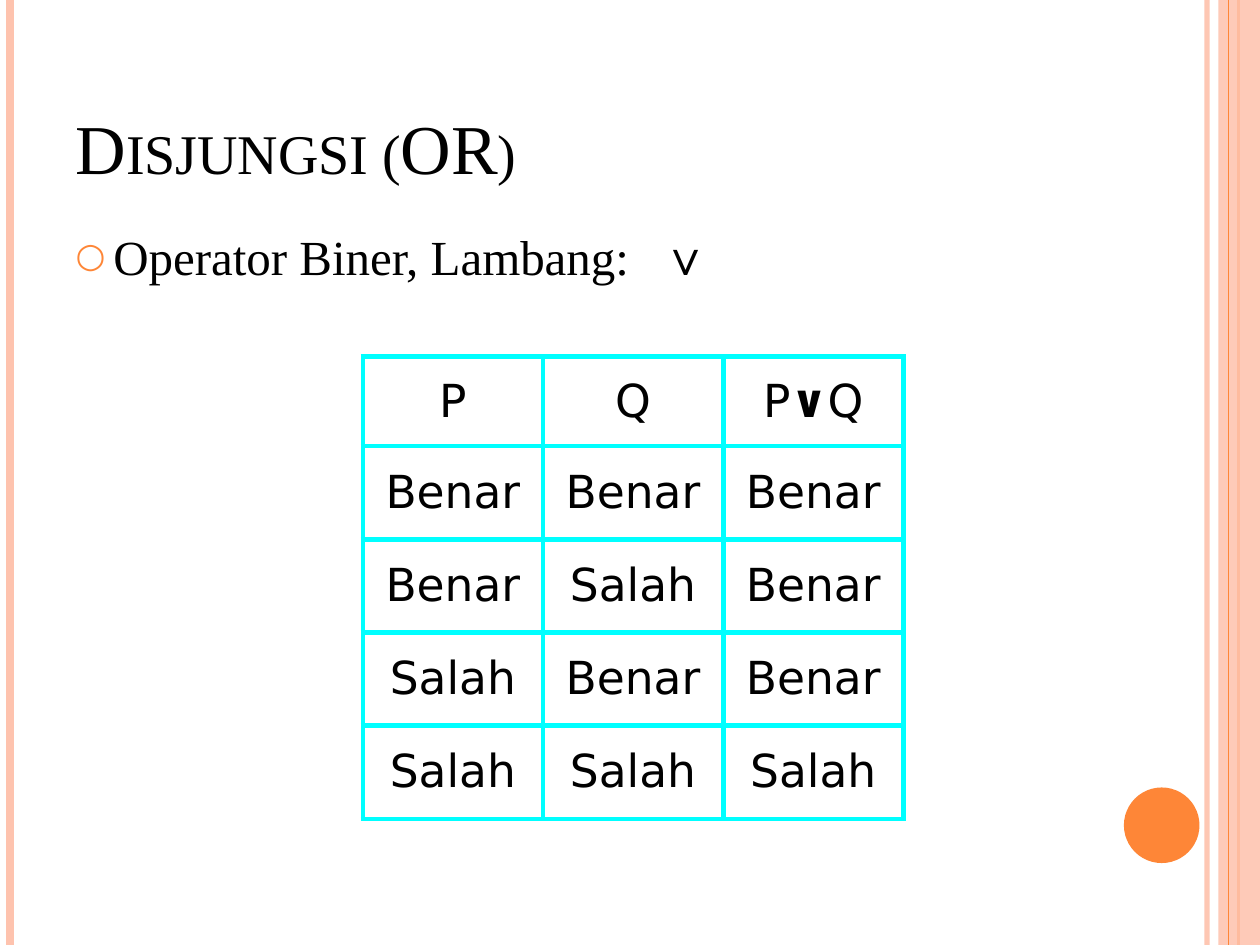
from lxml import etree
from pptx import Presentation
from pptx.dml.color import RGBColor
from pptx.enum.shapes import MSO_CONNECTOR, MSO_SHAPE
from pptx.enum.text import MSO_ANCHOR, MSO_AUTO_SIZE, PP_ALIGN
from pptx.oxml.ns import qn
from pptx.util import Emu, Inches, Pt

STRAIGHT = MSO_CONNECTOR.STRAIGHT
RECTANGLE, OVAL = MSO_SHAPE.RECTANGLE, MSO_SHAPE.OVAL
BOTTOM, MIDDLE, TOP = MSO_ANCHOR.BOTTOM, MSO_ANCHOR.MIDDLE, MSO_ANCHOR.TOP
LEFT, CENTER = PP_ALIGN.LEFT, PP_ALIGN.CENTER
NO_AUTOFIT = MSO_AUTO_SIZE.NONE

SERIF, SANS = "Times New Roman", "DejaVu Sans"
BLACK, ORANGE, PEACH, CYAN = "000000", "FE8637", "FEC3AE", "00FFFF"
WIDTH, HEIGHT = 10, 7.5

TITLE = "Disjungsi (OR)"
OPERATOR = "∨"
BULLET_LINE = ["Operator Biner, Lambang:\t", OPERATOR]
TRUTH_TABLE = [
    [["P"], ["Q"], ["P", OPERATOR, "Q"]],
    [["Benar"], ["Benar"], ["Benar"]],
    [["Benar"], ["Salah"], ["Benar"]],
    [["Salah"], ["Benar"], ["Benar"]],
    [["Salah"], ["Salah"], ["Salah"]],
]
COLUMN_WIDTH, HEADER_HEIGHT, ROW_HEIGHT = 1.43, 0.71, 0.74
BACK_STRIPES = [(9.58, PEACH, 3, 93), (0.08, PEACH, 4.5, 100), (9.83, ORANGE, 1.5, 100)]
FRONT_STRIPES = [(9.75, ORANGE, 0.75, 100)]


def color(value):
    return RGBColor.from_string(value)


def add_node(parent, tag, **attributes):
    return etree.SubElement(parent, qn(tag), attributes)


def set_alpha(properties, percent):
    if percent < 100:
        fill_color = next(properties.iter(qn("a:srgbClr")))
        add_node(fill_color, "a:alpha", val=str(percent * 1000))


def write(para, texts, font, size, align=LEFT, small_caps=False):
    para.alignment = align
    for text in texts:
        span = para.add_run()
        span.text = text
        span.font.name, span.font.size = font, Pt(size)
        span.font.bold = text == OPERATOR
        span.font.color.rgb = color(BLACK)
        if small_caps:
            span.font._element.set("cap", "small")


def place(box, left, top, width, height, anchor):
    box.left, box.top = Inches(left), Inches(top)
    box.width, box.height = Inches(width), Inches(height)
    box.text_frame.auto_size = NO_AUTOFIT
    box.text_frame.vertical_anchor = anchor
    return box.text_frame.paragraphs[0]


def add_stripes(page, stripes):
    for x, value, weight, alpha in stripes:
        stripe = page.shapes.add_connector(STRAIGHT, Inches(x), 0, Inches(x), Inches(HEIGHT))
        stripe.line.color.rgb = color(value)
        stripe.line.width = Pt(weight)
        properties = stripe._element.spPr
        set_alpha(properties, alpha)
        add_node(properties, "a:effectLst")


def add_block(page, kind, left, top, width, height, value, alpha=100):
    block = page.shapes.add_shape(kind, Inches(left), Inches(top), Inches(width), Inches(height))
    block.shadow.inherit = False
    block.fill.solid()
    block.fill.fore_color.rgb = color(value)
    block.line.fill.background()
    set_alpha(block._element.spPr, alpha)


def add_bullet(para, tab):
    properties = para._p.get_or_add_pPr()
    properties.set("marL", str(Inches(0.3)))
    properties.set("indent", str(-Inches(0.3)))
    add_node(add_node(properties, "a:buClr"), "a:srgbClr", val=ORANGE)
    add_node(properties, "a:buSzPct", val="70000")
    add_node(properties, "a:buFont", typeface=SANS)
    add_node(properties, "a:buChar", char="○")
    add_node(add_node(properties, "a:tabLst"), "a:tab", pos=str(Inches(tab)), algn="l")


def add_borders(cell):
    properties = cell._tc.get_or_add_tcPr()
    for side in ("a:lnL", "a:lnR", "a:lnT", "a:lnB"):
        border = add_node(properties, side, w=str(Pt(3)))
        add_node(add_node(border, "a:solidFill"), "a:srgbClr", val=CYAN)


def add_truth_table(page, left, top):
    rows, columns = len(TRUTH_TABLE), len(TRUTH_TABLE[0])
    heights = [HEADER_HEIGHT] + [ROW_HEIGHT] * (rows - 1)
    table = page.shapes.add_table(
        rows, columns, Inches(left), Inches(top),
        Inches(COLUMN_WIDTH * columns), Inches(sum(heights)),
    ).table
    table.first_row = table.horz_banding = False
    for column in table.columns:
        column.width = Inches(COLUMN_WIDTH)
    for row, height, contents in zip(table.rows, heights, TRUTH_TABLE):
        row.height = Inches(height)
        for cell, texts in zip(row.cells, contents):
            add_borders(cell)
            cell.fill.background()
            cell.vertical_anchor = MIDDLE
            write(cell.text_frame.paragraphs[0], texts, SANS, 26, align=CENTER)


def main():
    deck = Presentation()
    deck.slide_width, deck.slide_height = Inches(WIDTH), Inches(HEIGHT)
    page = deck.slides.add_slide(deck.slide_layouts[1])

    add_stripes(page, BACK_STRIPES)
    add_block(page, RECTANGLE, 9.67, 0, 0.33, HEIGHT, PEACH, alpha=87)
    add_stripes(page, FRONT_STRIPES)
    add_block(page, OVAL, 8.92, 6.25, 0.6, 0.6, ORANGE)

    title = place(page.shapes.title, 0.5, 0.3, 8.17, 1.25, BOTTOM)
    write(title, [TITLE], SERIF, 40, small_caps=True)

    body = place(page.placeholders[1], 0.5, 1.75, 8.17, 5.33, TOP)
    add_bullet(body, tab=4.65)
    body.space_before = Emu(0)
    write(body, BULLET_LINE, SERIF, 28)

    add_truth_table(page, 2.88, 2.83)
    deck.save("out.pptx")


if __name__ == "__main__":
    main()
